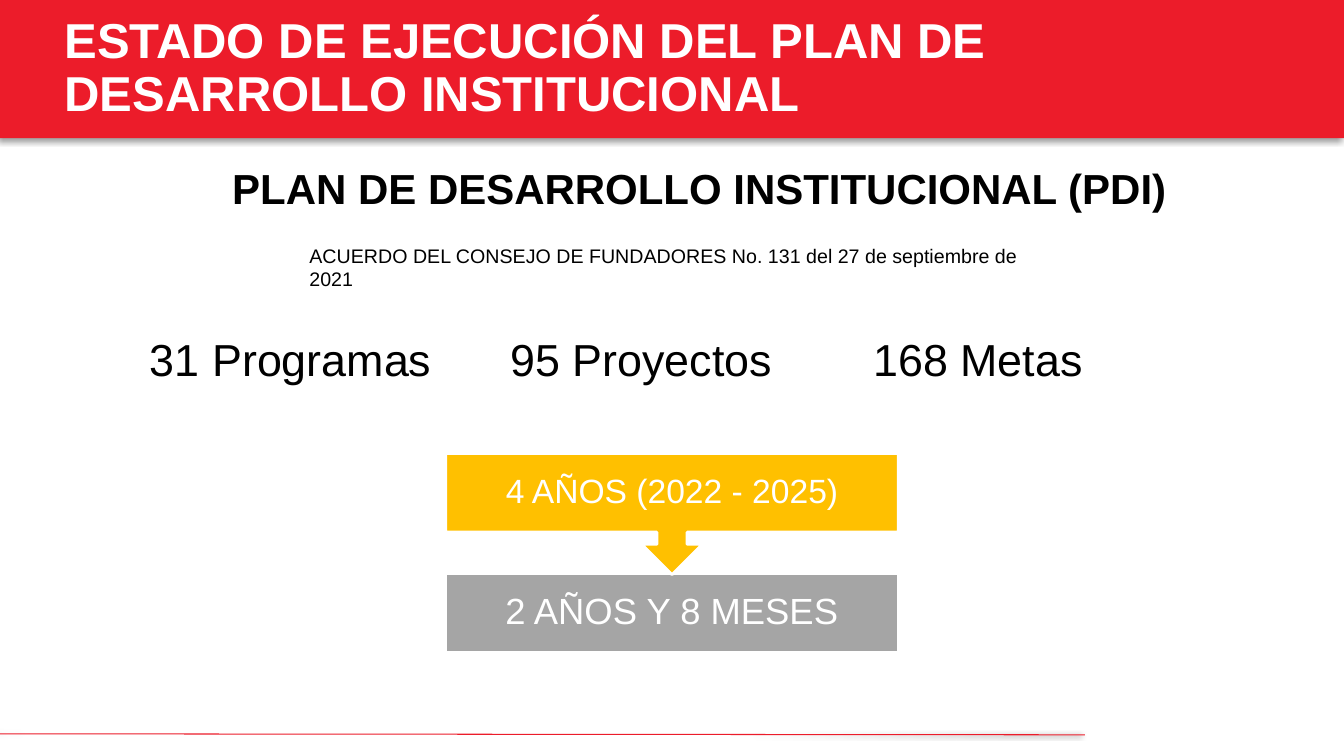
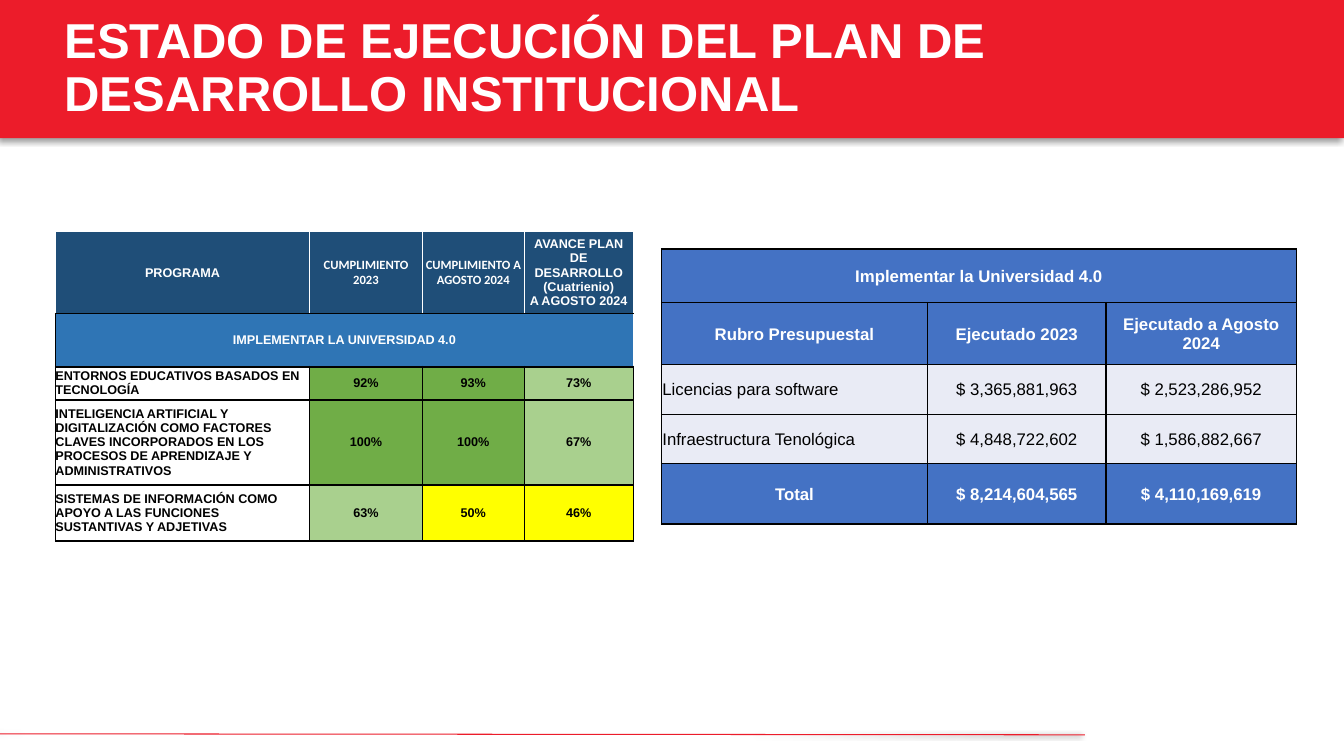
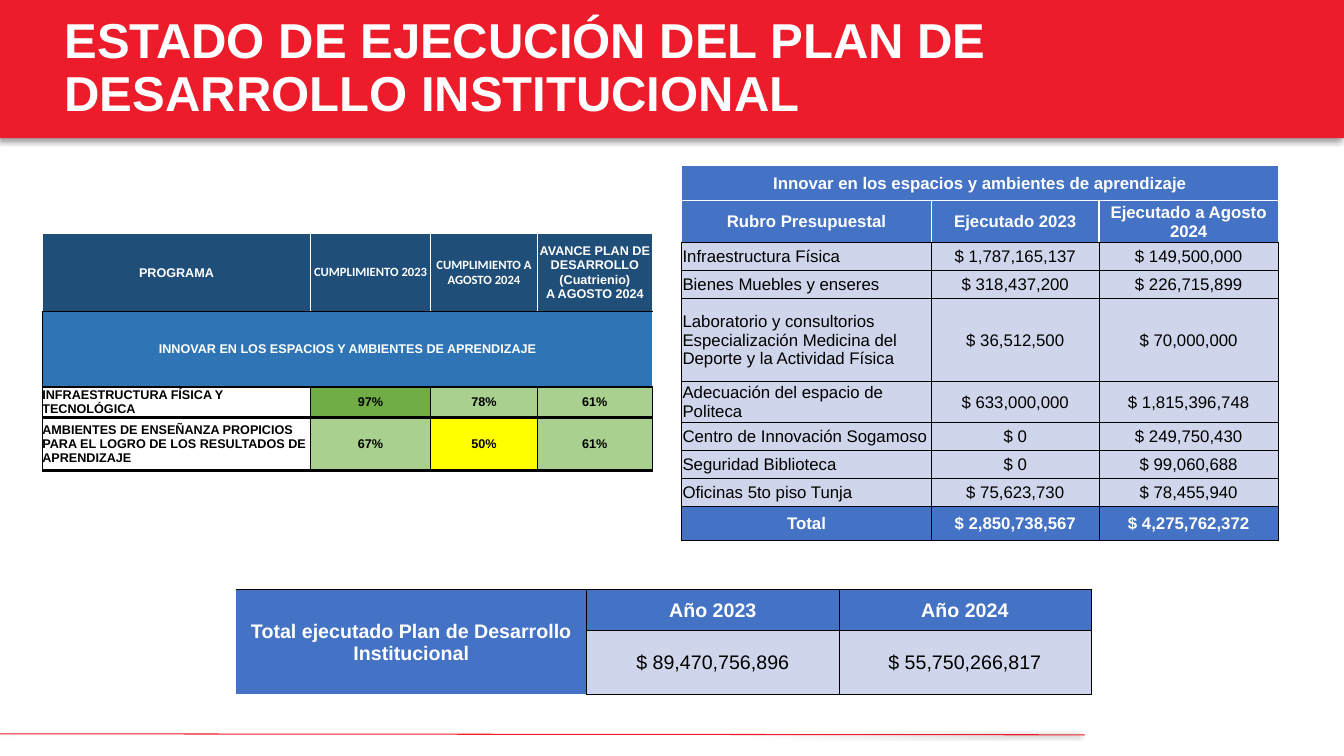
import dataclasses

import pptx
import pptx.dml.color
import pptx.enum.shapes
import pptx.enum.text
import pptx.oxml
import pptx.oxml.ns
import pptx.util

Inches = pptx.util.Inches
Pt = pptx.util.Pt
SHAPES = pptx.enum.shapes.MSO_SHAPE
ALIGN = pptx.enum.text.PP_ALIGN
MIDDLE = pptx.enum.text.MSO_ANCHOR.MIDDLE
NAMESPACE = pptx.oxml.ns.nsdecls("a")


@dataclasses.dataclass(frozen=True)
class Theme:
    # Colours
    red: str = "EC1C2A"
    white: str = "FFFFFF"
    black: str = "000000"
    amber: str = "FFC000"
    gray: str = "A5A5A5"
    navy: str = "1F4E78"
    band: str = "2F75B5"
    blue: str = "4472C4"
    pale: str = "E9EBF5"
    lavender: str = "CFD5EA"
    high: str = "70AD47"
    medium: str = "A9D08E"
    low: str = "FFFF00"
    # Fonts and sizes
    font: str = "Arial"
    narrow_font: str = "Calibri"
    title: float = 35
    heading: float = 30
    figure: float = 32
    months: float = 26
    years: float = 24
    note: float = 14
    budget: float = 12
    progress: float = 9


THEME = Theme()


@dataclasses.dataclass(frozen=True)
class CellStyle:
    """Look of a table cell; borders map a side to (colour, points)."""
    size: float
    borders: dict
    margins: tuple
    fill: str = None
    color: str = THEME.black
    bold: bool = True
    font: str = THEME.font
    align: int = ALIGN.CENTER

    def but(self, **changes):
        return dataclasses.replace(self, **changes)


def sides(names, color, width):
    return {side: (color, width) for side in names}


def rgb(color):
    return pptx.dml.color.RGBColor.from_string(color)


def apply(target, values):
    for name, value in values.items():
        setattr(target, name, value)


class Deck:
    def __init__(self, theme):
        self.theme = theme
        self.presentation = pptx.Presentation()
        apply(self.presentation, {"slide_width": Inches(13.33), "slide_height": Inches(7.5)})
        self.slide = None

    def new_slide(self, title_lines):
        """Blank slide with the shared footer rule and title band."""
        self.slide = self.presentation.slides.add_slide(self.presentation.slide_layouts[6])
        rule = self.slide.shapes.add_connector(
            pptx.enum.shapes.MSO_CONNECTOR.STRAIGHT,
            Inches(0), Inches(7.28), Inches(10.76), Inches(7.29))
        rule.line.color.rgb = rgb(self.theme.red)
        rule.line.width = Pt(0.75)
        self.cast_shadow(rule, 180)
        band = self.shape(SHAPES.RECTANGLE, (0, 0, 13.33, 1.37), self.theme.red)
        self.fill_text(band.text_frame, title_lines, self.theme.title, self.theme.white,
                       bold=True, align=ALIGN.LEFT, spacing=0.9)
        band.text_frame.margin_left = Inches(0.64)
        self.cast_shadow(band, 135)

    def cast_shadow(self, shape, direction):
        properties = shape._element.spPr
        for effects in properties.findall(pptx.oxml.ns.qn("a:effectLst")):
            properties.remove(effects)
        properties.append(pptx.oxml.parse_xml(
            f'<a:effectLst {NAMESPACE}><a:outerShdw blurRad="{Pt(4)}" dist="{Pt(3)}" '
            f'dir="{direction * 60000}" algn="tl" rotWithShape="0">'
            f'<a:srgbClr val="{self.theme.black}"><a:alpha val="40000"/></a:srgbClr>'
            '</a:outerShdw></a:effectLst>'))

    def fill_text(self, frame, lines, size, color, bold=False, font=None,
                  align=ALIGN.CENTER, spacing=1.0):
        frame.text = lines
        for paragraph in frame.paragraphs:
            apply(paragraph, {"alignment": align, "line_spacing": spacing})
            for run in paragraph.runs:
                apply(run.font, {"size": Pt(size), "bold": bold,
                                 "name": font or self.theme.font})
                run.font.color.rgb = rgb(color)

    def text(self, box, words, size, anchor=None, **style):
        frame = self.slide.shapes.add_textbox(*map(Inches, box)).text_frame
        apply(frame, {"word_wrap": True, "vertical_anchor": anchor})
        self.fill_text(frame, words, size, self.theme.black, **style)

    def shape(self, kind, box, fill, outline=None):
        shape = self.slide.shapes.add_shape(kind, *map(Inches, box))
        shape.shadow.inherit = False
        shape.fill.solid()
        shape.fill.fore_color.rgb = rgb(fill)
        if outline:
            shape.line.color.rgb = rgb(outline)
            shape.line.width = Pt(2)
        else:
            shape.line.fill.background()
        apply(shape.text_frame, {"word_wrap": True, "vertical_anchor": MIDDLE})
        return shape

    def step(self, kind, box, fill, words, size):
        shape = self.shape(kind, box, fill, self.theme.white)
        self.fill_text(shape.text_frame, words, size, self.theme.white, spacing=0.9)

    def table(self, left, top, widths, heights, rows, merges):
        """Rows hold (text, style) pairs; merges hold corner cell pairs."""
        frame = self.slide.shapes.add_table(
            len(heights), len(widths), Inches(left), Inches(top),
            Inches(sum(widths)), Inches(sum(heights)))
        table = frame.table
        apply(table, {"first_row": False, "horz_banding": False})
        for column, width in zip(table.columns, widths):
            column.width = Inches(width)
        for row, height in zip(table.rows, heights):
            row.height = Inches(height)
        for row, contents in zip(table.rows, rows):
            for cell, (words, style) in zip(row.cells, contents):
                self.cell(cell, words, style)
        for first, last in merges:
            table.cell(*first).merge(table.cell(*last))

    def cell(self, cell, words, style):
        names = ("margin_left", "margin_top", "margin_right", "margin_bottom")
        apply(cell, dict(zip(names, map(Inches, style.margins))))
        cell.vertical_anchor = MIDDLE
        self.fill_text(cell.text_frame, words, style.size, style.color, bold=style.bold,
                       font=style.font, align=style.align)
        # Borders come before the fill in the cell properties
        properties = cell._tc.get_or_add_tcPr()
        for side in "LRTB":
            color, width = style.borders.get(side, (None, 0))
            paint = (f'<a:solidFill><a:srgbClr val="{color}"/></a:solidFill>'
                     if color else "<a:noFill/>")
            properties.append(pptx.oxml.parse_xml(
                f'<a:ln{side} {NAMESPACE} w="{Pt(width)}">{paint}</a:ln{side}>'))
        if style.fill:
            cell.fill.solid()
            cell.fill.fore_color.rgb = rgb(style.fill)
        else:
            cell.fill.background()

    def progress_table(self, left, top, widths, heights, goal, programs):
        """Compliance percentages, coloured by level."""
        theme = self.theme
        body = CellStyle(theme.progress, sides("LR", theme.black, 1) | sides("TB", theme.black, 2),
                         (0, 0, 0, 0))
        header = body.but(fill=theme.navy, color=theme.white,
                          borders=sides("LTR", theme.white, 1) | sides("B", theme.black, 1))
        narrow = header.but(font=theme.narrow_font)
        band = header.but(fill=theme.band,
                          borders=sides("LT", theme.black, 1) | sides("B", theme.black, 2))
        rows = [
            [("PROGRAMA", header), ("CUMPLIMIENTO 2023", narrow),
             ("CUMPLIMIENTO A AGOSTO 2024", narrow),
             ("AVANCE PLAN DE DESARROLLO (Cuatrienio)\vA AGOSTO 2024", header)],
            [(goal, band)] + [("", band)] * 3,
        ]
        for name, *levels in programs:
            rows.append([(name, body.but(align=ALIGN.LEFT))]
                        + [(f"{level}%", body.but(fill=self.level_color(level)))
                           for level in levels])
        self.table(left, top, widths, heights, rows, [((1, 0), (1, 3))])

    def level_color(self, level):
        if level >= 90:
            return self.theme.high
        return self.theme.medium if level > 50 else self.theme.low

    def budget_styles(self, size, line, fill):
        theme = self.theme
        header = CellStyle(size, sides("LTRB", theme.black, line), (0.01, 0.01, 0.01, 0),
                           fill=theme.blue, color=theme.white)
        return header, header.but(fill=fill, color=theme.black, bold=False)

    def budget_table(self, left, top, widths, heights, goal, items, totals, line, fill,
                     white_header=False):
        """Money spent by budget item, closed by a total row."""
        theme = self.theme
        header, body = self.budget_styles(theme.budget, line, fill)
        top_style = heading = header
        if white_header:
            top_style = header.but(borders=sides("LTRB", theme.white, 1))
            heading = header.but(
                borders=sides("LTR", theme.white, 1) | sides("B", theme.black, line))
        headings = ("Rubro Presupuestal", "Ejecutado 2023", "Ejecutado a Agosto 2024")
        rows = [[(goal, top_style)] + [("", top_style)] * 2,
                [(words, heading) for words in headings]]
        for name, *amounts in items:
            rows.append([(name, body.but(align=ALIGN.LEFT))]
                        + [(f"$ {amount:,}", body) for amount in amounts])
        rows.append([("Total", header)] + [(f"$ {amount:,}", header) for amount in totals])
        self.table(left, top, widths, heights, rows, [((0, 0), (0, 2))])

    def grand_total(self, left, top, widths, heights, label, years):
        theme = self.theme
        header, body = self.budget_styles(theme.note, 0.5, theme.lavender)
        label_style = header.but(borders=sides("TR", theme.black, 0.5))
        rows = [[(label, label_style)] + [(year, header) for year in years],
                [("", label_style)] + [(f"$ {amount:,}", body) for amount in years.values()]]
        self.table(left, top, widths, heights, rows, [((0, 0), (1, 0))])


def main():
    deck = Deck(THEME)
    title = "ESTADO DE EJECUCIÓN DEL PLAN DE\nDESARROLLO INSTITUCIONAL"

    # Slide 1: the plan in figures
    deck.new_slide(title)
    deck.text((2.03, 1.56, 9.82, 0.59), "PLAN DE DESARROLLO INSTITUCIONAL (PDI)",
              THEME.heading, bold=True)
    deck.text((2.97, 2.37, 7.71, 0.34),
              "ACUERDO DEL CONSEJO DE FUNDADORES No. 131 del 27 de septiembre de 2021",
              THEME.note, align=ALIGN.LEFT)
    for left, width, words in ((1.35, 3.07, "31 Programas"), (4.89, 2.94, "95 Proyectos"),
                               (8.29, 2.82, "168 Metas")):
        deck.text((left, 2.98, width, 1.23), words, THEME.figure, anchor=MIDDLE, spacing=0.9)
    deck.step(SHAPES.RECTANGLE, (4.42, 5.69, 4.49, 0.78), THEME.gray,
              "2 AÑOS Y 8 MESES", THEME.months)
    deck.step(SHAPES.DOWN_ARROW_CALLOUT, (4.42, 4.5, 4.49, 1.2), THEME.amber,
              "4 AÑOS (2022 - 2025)", THEME.years)

    # Slide 2: University 4.0
    deck.new_slide(title)
    deck.progress_table(
        0.55, 2.3, (2.52, 1.12, 1.01, 1.08), (0.81, 0.53, 0.33, 0.84, 0.56),
        "IMPLEMENTAR LA UNIVERSIDAD 4.0",
        [("ENTORNOS EDUCATIVOS BASADOS EN TECNOLOGÍA", 92, 93, 73),
         ("INTELIGENCIA ARTIFICIAL Y DIGITALIZACIÓN COMO FACTORES CLAVES INCORPORADOS "
          "EN LOS PROCESOS DE APRENDIZAJE Y ADMINISTRATIVOS", 100, 100, 67),
         ("SISTEMAS DE INFORMACIÓN COMO APOYO A LAS FUNCIONES SUSTANTIVAS Y ADJETIVAS",
          63, 50, 46)])
    deck.budget_table(
        6.56, 2.47, (2.64, 1.77, 1.89), (0.53, 0.62, 0.49, 0.49, 0.6),
        "Implementar la Universidad 4.0",
        [("Licencias para software", 3365881963, 2523286952),
         ("Infraestructura Tenológica", 4848722602, 1586882667)],
        (8214604565, 4110169619), 1, THEME.pale)

    # Slide 3: learning spaces and overall total
    deck.new_slide(title)
    deck.progress_table(
        0.42, 2.32, (2.66, 1.19, 1.06, 1.14), (0.77, 0.75, 0.3, 0.53),
        "INNOVAR EN LOS ESPACIOS Y AMBIENTES DE APRENDIZAJE",
        [("INFRAESTRUCTURA FÍSICA Y TECNOLÓGICA", 97, 78, 61),
         ("AMBIENTES DE ENSEÑANZA PROPICIOS PARA EL LOGRO DE LOS RESULTADOS DE APRENDIZAJE",
          67, 50, 61)])
    deck.budget_table(
        6.76, 1.64, (2.48, 1.66, 1.78),
        (0.35, 0.41, 0.28, 0.28, 0.82, 0.41, 0.28, 0.28, 0.27, 0.34),
        "Innovar en los espacios y ambientes de aprendizaje",
        [("Infraestructura Física", 1787165137, 149500000),
         ("Bienes Muebles y enseres", 318437200, 226715899),
         ("Laboratorio y consultorios Especialización Medicina del Deporte y la "
          "Actividad Física", 36512500, 70000000),
         ("Adecuación del espacio de Politeca", 633000000, 1815396748),
         ("Centro de Innovación Sogamoso", 0, 249750430),
         ("Seguridad Biblioteca", 0, 99060688),
         ("Oficinas 5to piso Tunja", 75623730, 78455940)],
        (2850738567, 4275762372), 0.5, THEME.lavender, white_header=True)
    deck.grand_total(2.34, 5.85, (3.48, 2.5, 2.5), (0.4, 0.64),
                     "Total ejecutado Plan de Desarrollo Institucional",
                     {"Año 2023": 89470756896, "Año 2024": 55750266817})

    deck.presentation.save("out.pptx")


if __name__ == "__main__":
    main()
